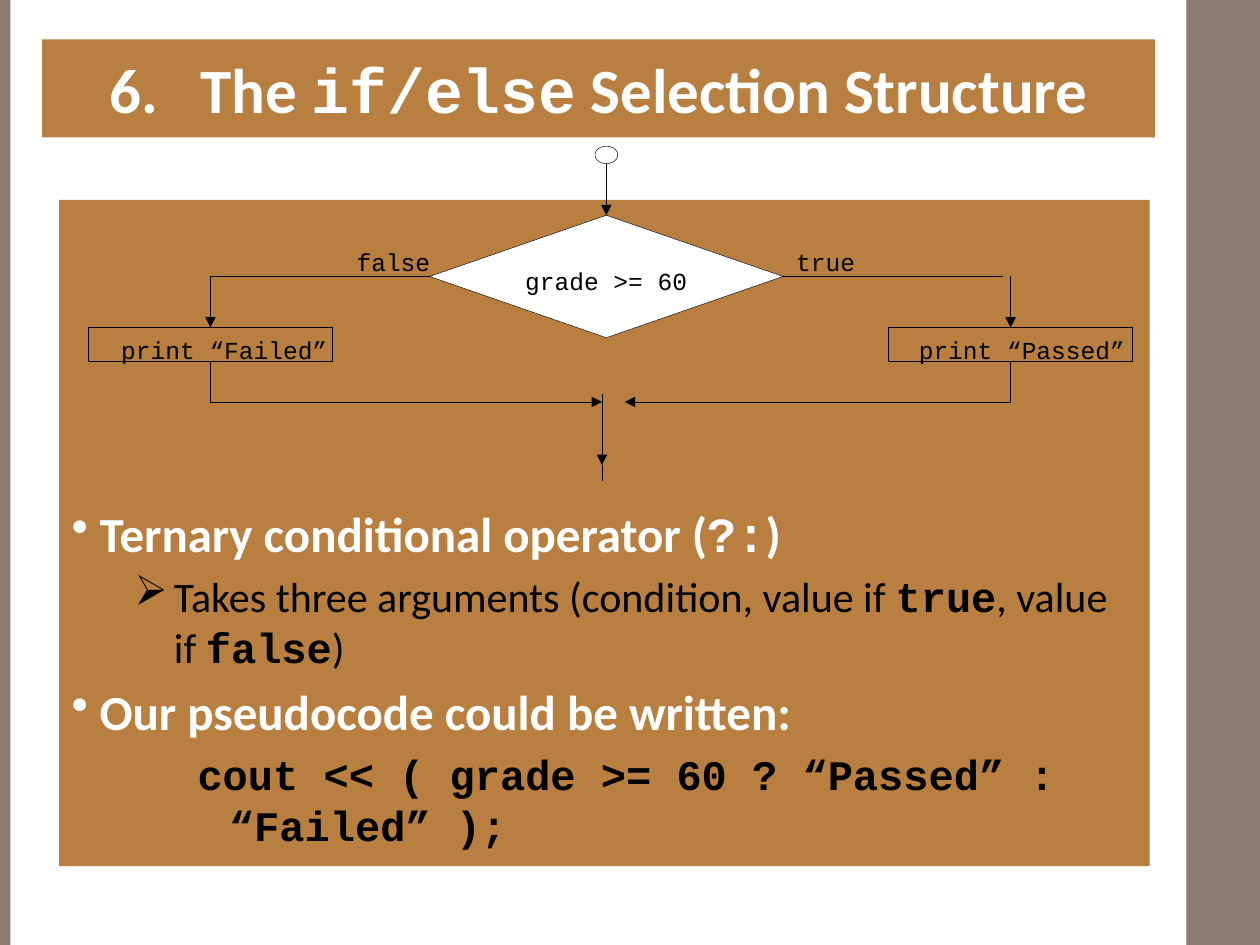
from lxml.etree import SubElement
from pptx import Presentation
from pptx.dml.color import RGBColor
from pptx.enum.shapes import MSO_CONNECTOR, MSO_SHAPE
from pptx.enum.text import MSO_ANCHOR, MSO_AUTO_SIZE, PP_ALIGN
from pptx.oxml.ns import qn
from pptx.util import Pt

WHITE, BLACK, BROWN, TAUPE = "FFFFFF", "000000", "B87F40", "8C7B70"
SANS, MONO = "Calibri", "Courier New"
THIN = 0.25
LEFT_X, CENTER_X, RIGHT_X = 120.25, 346.5, 577.5
EXIT_X = 344
BRANCH_Y, MERGE_Y = 158, 229.7


def color(value):
    return RGBColor.from_string(value)


def paint(shape, fill=None, line=None):
    if fill:
        shape.fill.solid()
        shape.fill.fore_color.rgb = color(fill)
    else:
        shape.fill.background()
    if line:
        shape.line.color.rgb = color(line)
        shape.line.width = Pt(THIN)
    else:
        shape.line.fill.background()


def add_block(page, kind, bounds, fill=None, line=None):
    shape = page.shapes.add_shape(kind, *map(Pt, bounds))
    shape.shadow.inherit = False
    paint(shape, fill, line)
    return shape


def set_frame(frame, left, top, right, bottom, wrap=True, anchor=MSO_ANCHOR.TOP):
    frame.auto_size = MSO_AUTO_SIZE.NONE
    frame.word_wrap = wrap
    frame.vertical_anchor = anchor
    frame.margin_left, frame.margin_top = Pt(left), Pt(top)
    frame.margin_right, frame.margin_bottom = Pt(right), Pt(bottom)


def add_span(para, text, size, font=SANS, ink=BLACK, bold=False):
    span = para.add_run()
    span.text = text
    span.font.name = font
    span.font.size = Pt(size)
    span.font.bold = bold
    span.font.color.rgb = color(ink)
    return span


def add_para(frame, spans, size, ink, margin, indent, bullet=None):
    first = not frame.paragraphs[0].runs
    para = frame.paragraphs[0] if first else frame.add_paragraph()
    para.alignment = PP_ALIGN.LEFT
    para.space_before = Pt(0 if first else size * 0.2)
    properties = para._p.get_or_add_pPr()
    properties.set("marL", str(Pt(margin)))
    properties.set("indent", str(Pt(indent)))
    if bullet:
        SubElement(properties, qn("a:buChar")).set("char", bullet)
    else:
        SubElement(properties, qn("a:buNone"))
    for text, font, bold in spans:
        add_span(para, text, size, font, ink, bold)


def add_label(page, text, bounds):
    box = page.shapes.add_textbox(*map(Pt, bounds))
    set_frame(box.text_frame, 0, 0, 0, 0, wrap=False)
    add_span(box.text_frame.paragraphs[0], text, 14, MONO)


def add_step(page, kind, text, bounds, fill, left, top):
    step = add_block(page, kind, bounds, fill, BLACK)
    set_frame(step.text_frame, left, top, 0, 0, wrap=False)
    para = step.text_frame.paragraphs[0]
    para.alignment = PP_ALIGN.CENTER
    add_span(para, text, 14, MONO)
    return step


def add_line(page, start, end, arrow=False, begin=None, finish=None):
    line = page.shapes.add_connector(MSO_CONNECTOR.STRAIGHT, *map(Pt, start + end))
    if begin:
        line.begin_connect(*begin)
    if finish:
        line.end_connect(*finish)
    line.line.color.rgb = color(BLACK)
    line.line.width = Pt(THIN)
    if arrow:
        SubElement(line.line._get_or_add_ln(), qn("a:tailEnd")).set("type", "triangle")
    SubElement(line._element.spPr, qn("a:effectLst"))


def add_title(page):
    title = page.shapes.title
    title.left, title.top, title.width, title.height = map(Pt, (24, 22.5, 636, 56))
    paint(title, BROWN)
    set_frame(title.text_frame, 7.2, 3.6, 7.2, 3.6, anchor=MSO_ANCHOR.MIDDLE)
    para = title.text_frame.paragraphs[0]
    para.alignment = PP_ALIGN.CENTER
    add_span(para, "6.", 36, SANS, WHITE, True)
    gap = add_span(para, " ", 36, SANS, WHITE, True)
    gap._r.get_or_add_rPr().set("spc", "1630")
    add_span(para, "The ", 36, SANS, WHITE, True)
    add_span(para, "if/else", 36, MONO, WHITE, True)
    add_span(para, " Selection Structure", 36, SANS, WHITE, True)


def add_panel(page):
    panel = add_block(page, MSO_SHAPE.RECTANGLE, (33.8, 114.3, 623.2, 380.7), BROWN)
    frame = panel.text_frame
    set_frame(frame, 7.2, 173.5, 7.2, 3.6)
    add_para(frame, [("Ternary conditional operator (", SANS, True), ("?:", MONO, True),
                     (")", SANS, True)], 28, WHITE, 16, -16, "•")
    add_para(frame, [("Takes three arguments (condition, value if ", SANS, False),
                     ("true", MONO, True), (", value if ", SANS, False),
                     ("false", MONO, True), (")", SANS, False)],
             24, BLACK, 58.5, -22.5, "➢")
    add_para(frame, [("Our pseudocode could be written:", SANS, True)],
             28, WHITE, 16, -16, "•")
    add_para(frame, [("cout << ( grade >= 60 ? “Passed” : “Failed” );", MONO, True)],
             24, BLACK, 90, -18)


def add_branch(page, decision, side, x, turn_x, text, inset, merge):
    width = 139.5
    step = add_step(page, MSO_SHAPE.RECTANGLE, text,
                    (x - width / 2, 187.2, width, 19.3), None, inset, 4.3)
    add_line(page, (CENTER_X, BRANCH_Y), (turn_x, BRANCH_Y), begin=(decision, side))
    add_line(page, (x, BRANCH_Y), (x, 187.2), True, finish=(step, 0))
    add_line(page, (x, 206.5), (x, MERGE_Y), begin=(step, 2))
    add_line(page, (x, MERGE_Y), (merge, MERGE_Y), True)


def add_flowchart(page):
    add_block(page, MSO_SHAPE.OVAL, (340, 83.5, 13, 10), None, BLACK)
    decision = add_step(page, MSO_SHAPE.DIAMOND, "grade >= 60",
                        (245.5, 123, 202, 70), WHITE, 0, 11.5)
    add_line(page, (CENTER_X, 93.5), (CENTER_X, 123), True, finish=(decision, 0))
    add_branch(page, decision, 1, LEFT_X, LEFT_X, "print “Failed”", 16, EXIT_X)
    add_branch(page, decision, 3, RIGHT_X, 573, "print “Passed”", 13, 357)
    add_label(page, "false", (203.8, 141, 54.7, 19.4))
    add_label(page, "true", (455, 141, 44.6, 19.4))
    add_line(page, (EXIT_X, 225.4), (EXIT_X, 235.4))
    add_line(page, (EXIT_X, 235.4), (EXIT_X, 265.7), True)
    add_line(page, (EXIT_X, 265.7), (EXIT_X, 275))


def main():
    deck = Presentation()
    deck.slide_width, deck.slide_height = Pt(720), Pt(540)
    page = deck.slides.add_slide(deck.slide_layouts[5])
    for left, width in ((678, 42), (0, 6)):
        add_block(page, MSO_SHAPE.RECTANGLE, (left, 0, width, 540), TAUPE)
    add_title(page)
    add_panel(page)
    add_flowchart(page)
    deck.save("out.pptx")


if __name__ == "__main__":
    main()
